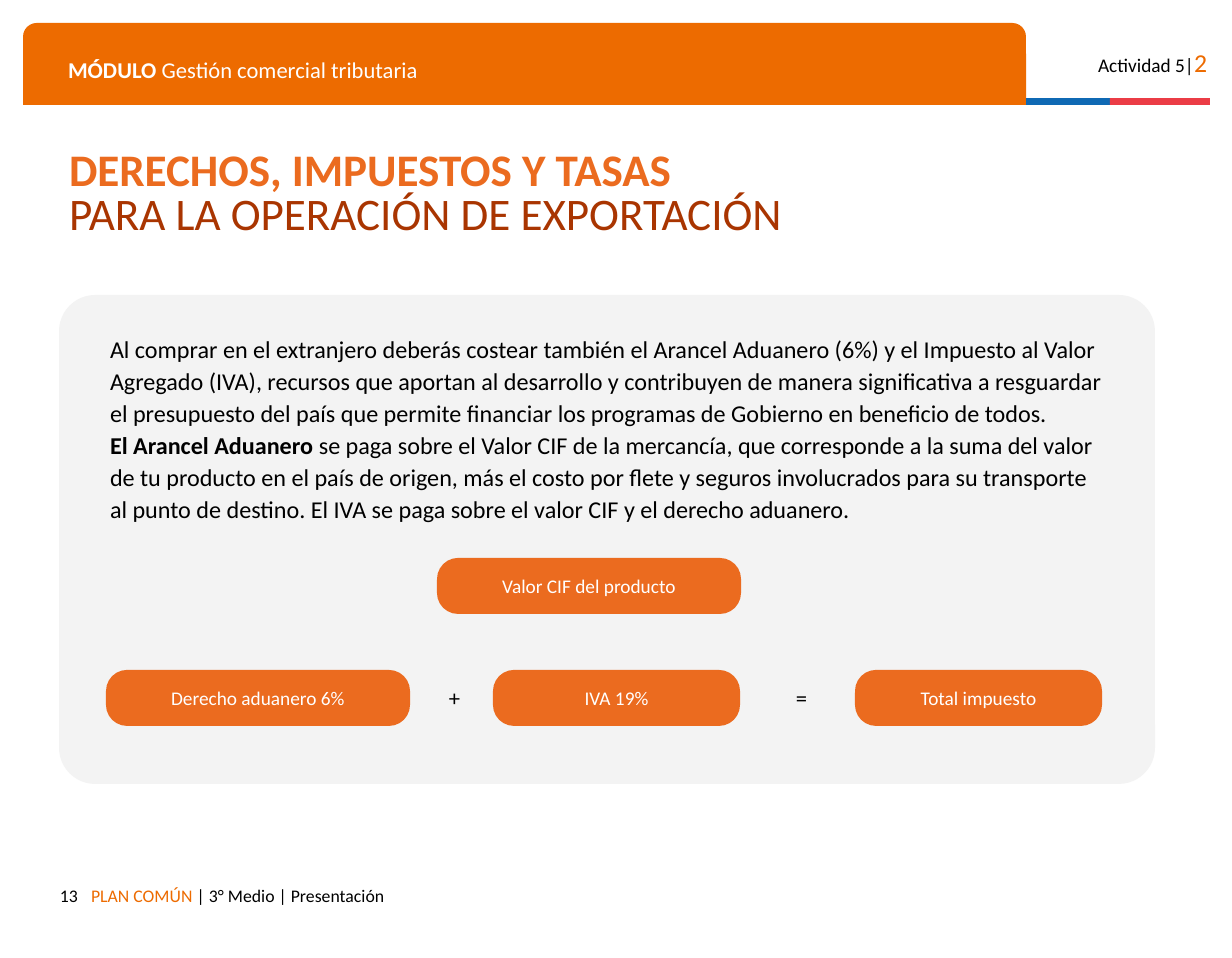
from pptx import Presentation
from pptx import util as u
from pptx.dml.color import RGBColor
from pptx.enum import shapes, text

PX = 7883
INSET = 12
FONT = "Calibri"
WHITE, BLACK = "FFFFFF", "000000"
BRAND, ORANGE, RUST = "ED6B00", "EB6B1F", "A93501"
BLUE, RED, GREY = "0F69B4", "EB3C46", "F3F3F3"
LEFT, CENTER, RIGHT = text.PP_ALIGN.LEFT, text.PP_ALIGN.CENTER, text.PP_ALIGN.RIGHT
TOP, MIDDLE = text.MSO_ANCHOR.TOP, text.MSO_ANCHOR.MIDDLE


def color(hex_code):
    """Turn a hex string into a colour."""
    return RGBColor.from_string(hex_code)


def px(*lengths):
    """Turn pixel lengths into EMU."""
    return [u.Emu(length * PX) for length in lengths]


def write(shape, paragraphs, align=LEFT, anchor=TOP, spacing=1.0, inset=INSET):
    """Fill a shape with paragraphs of (words, size, colour, bold) runs."""
    frame = shape.text_frame
    frame.word_wrap = True
    frame.auto_size = text.MSO_AUTO_SIZE.NONE
    frame.vertical_anchor = anchor
    frame.margin_left, frame.margin_right = px(INSET, INSET)
    frame.margin_top, frame.margin_bottom = px(inset, inset)
    for index, runs in enumerate(paragraphs):
        paragraph = frame.add_paragraph() if index else frame.paragraphs[0]
        paragraph.alignment = align
        paragraph.line_spacing = spacing
        paragraph.space_before = u.Pt(0)
        for words, size, hex_code, bold in runs:
            run = paragraph.add_run()
            run.text = words
            run.font.name = FONT
            run.font.size = u.Pt(size)
            run.font.bold = bold
            run.font.color.rgb = color(hex_code)


def add_text(slide, box, paragraphs, **style):
    """Add a text box."""
    write(slide.shapes.add_textbox(*px(*box)), paragraphs, **style)


def add_block(slide, kind, box, hex_code, adjustment=None):
    """Add a flat shape without outline."""
    shape = slide.shapes.add_shape(kind, *px(*box))
    shape.shadow.inherit = False
    shape.fill.solid()
    shape.fill.fore_color.rgb = color(hex_code)
    shape.line.fill.background()
    if adjustment is not None:
        shape.adjustments[0] = adjustment
    return shape


def add_header(slide, left, top, width, height):
    """Draw the module band, the two-colour strip and the activity label."""
    band = 1003
    add_block(slide, shapes.MSO_SHAPE.ROUND_2_SAME_RECTANGLE, (left, top, band, height), BRAND)
    strip, blue = 7, 84
    strip_left, strip_top = left + band, top + height - strip
    add_block(slide, shapes.MSO_SHAPE.RECTANGLE, (strip_left, strip_top, blue, strip), BLUE)
    add_block(slide, shapes.MSO_SHAPE.RECTANGLE,
              (strip_left + blue, strip_top, width - band - blue, strip), RED)
    add_text(slide, (left + 33, top + 21, 944, 48),
             [[("MÓDULO", 14, WHITE, True), (" Gestión comercial tributaria", 14, WHITE, False)]])
    add_text(slide, (left + width - 139, top + 12, 148, 50),
             [[("Actividad 5|", 12, BLACK, False), ("2", 16, BRAND, False)]], align=RIGHT)


def add_title(slide, *box):
    """Place the two-line title."""
    title = slide.shapes.title
    title.left, title.top, title.width, title.height = px(*box)
    write(title, [[("DERECHOS, IMPUESTOS Y TASAS", 28, ORANGE, True)],
                  [("PARA LA OPERACIÓN DE EXPORTACIÓN", 28, RUST, False)]],
          anchor=MIDDLE, spacing=0.8)


def add_tax_card(slide, left, top, width, height):
    """Draw the card with the explanation and the tax formula."""
    rounded = shapes.MSO_SHAPE.ROUNDED_RECTANGLE
    add_block(slide, rounded, (left, top, width, height), GREY, 0.074)
    add_text(slide, (left + 39, top + 14, 1023, 237), [
        [("Al comprar en el extranjero deberás costear también el Arancel Aduanero (6%) y el "
          "Impuesto al Valor Agregado (IVA), recursos que aportan al desarrollo y contribuyen de "
          "manera significativa a resguardar el presupuesto del país que permite financiar los "
          "programas de Gobierno en beneficio de todos.", 15, BLACK, False)],
        [("El Arancel Aduanero ", 15, BLACK, True),
         ("se paga sobre el Valor CIF de la mercancía, que corresponde a la suma del valor de tu "
          "producto en el país de origen, más el costo por flete y seguros involucrados para su "
          "transporte al punto de destino. El IVA se paga sobre el valor CIF y el derecho "
          "aduanero.", 15, BLACK, False)],
    ], anchor=MIDDLE, spacing=1.1)

    base_row, tax_row, pill_height = top + 263, top + 375, 56
    pills = [("Valor CIF del producto", 378, base_row, 304),
             ("Derecho aduanero 6%", 47, tax_row, 304),
             ("IVA 19%", 434, tax_row, 247),
             ("Total impuesto", 796, tax_row, 247)]
    for label, offset, row, pill_width in pills:
        pill = add_block(slide, rounded, (left + offset, row, pill_width, pill_height),
                         ORANGE, 0.376)
        write(pill, [[(label, 12, WHITE, False)]], align=CENTER, anchor=MIDDLE, inset=6)
    for sign, offset in (("+", 377), ("=", 724)):
        add_text(slide, (left + offset, tax_row, 37, pill_height),
                 [[(sign, 14, BLACK, False)]], align=CENTER, anchor=MIDDLE, inset=6)


def add_footer(slide, left, top, width, height):
    """Write the page number and the course line."""
    number_width = 67
    add_text(slide, (left, top, number_width, height), [[("13", 11, BLACK, False)]], align=RIGHT)
    course_left = number_width - INSET + 1
    add_text(slide, (left + course_left, top, width - course_left, height),
             [[("PLAN COMÚN ", 11, BRAND, False),
               ("| 3° Medio | Presentación", 11, BLACK, False)]])


def main():
    """Build and save the slide."""
    presentation = Presentation()
    presentation.slide_width, presentation.slide_height = px(1232, 958)
    slide = presentation.slides.add_slide(presentation.slide_layouts[5])
    add_header(slide, 23, 23, 1187, 82)
    add_title(slide, 57, 175, 1134, 41)
    add_tax_card(slide, 59, 295, 1096, 489)
    add_footer(slide, 23, 873, 885, 44)
    presentation.save("out.pptx")


if __name__ == "__main__":
    main()
